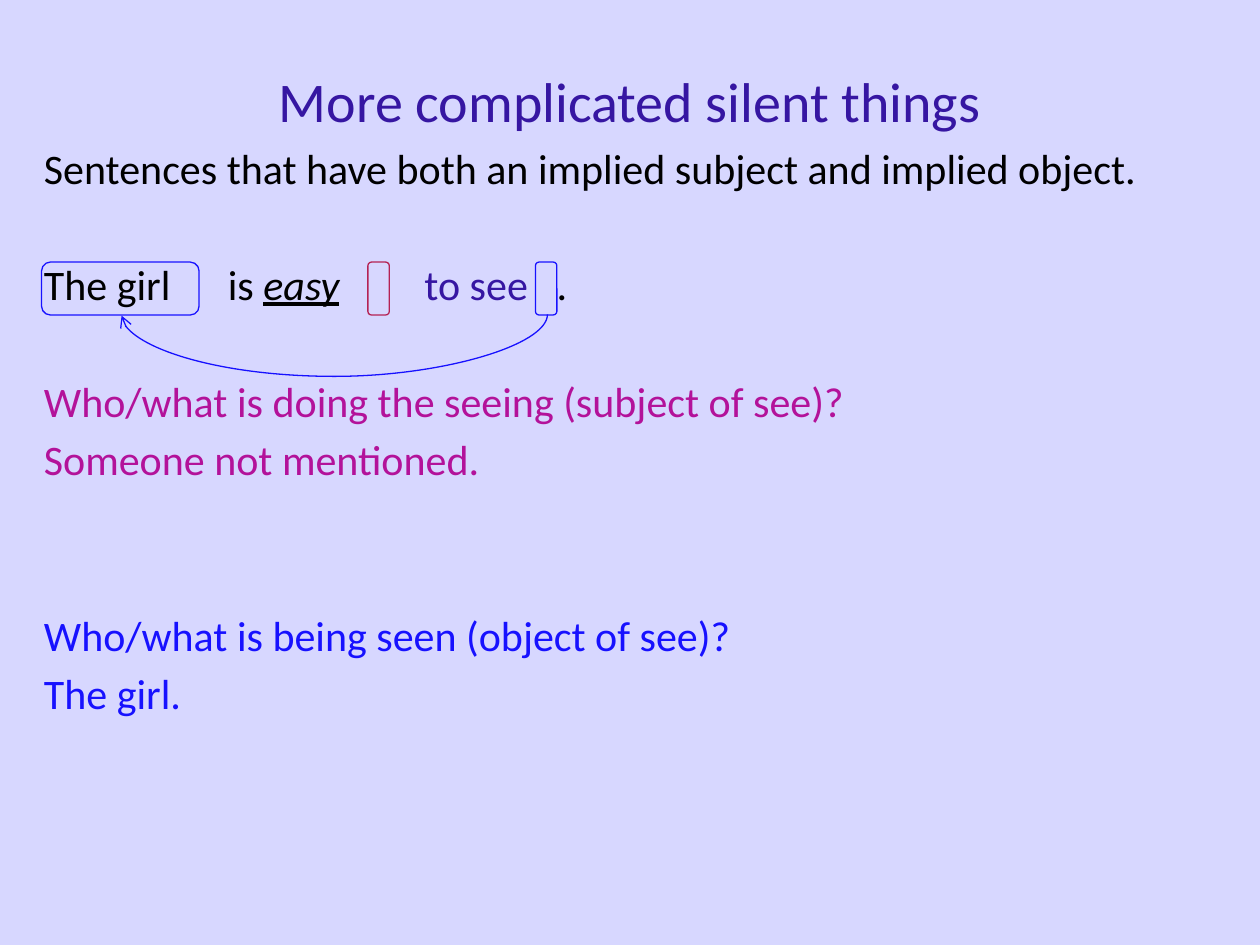
from dataclasses import dataclass

from lxml.etree import SubElement
from pptx import Presentation
from pptx.dml.color import RGBColor
from pptx.enum.shapes import MSO_CONNECTOR as CONNECTOR, MSO_SHAPE as SHAPE
from pptx.enum.text import MSO_ANCHOR as ANCHOR, PP_ALIGN as ALIGN
from pptx.oxml.ns import qn
from pptx.util import Inches, Pt


@dataclass(frozen=True)
class Theme:
    font: str = "Calibri"
    title_size: int = 32
    body_size: int = 24
    line_pitch: float = 33.7
    space_before: float = 4.4
    background: RGBColor = RGBColor.from_string("D7D7FF")
    black: RGBColor = RGBColor.from_string("000000")
    indigo: RGBColor = RGBColor.from_string("3616A2")
    magenta: RGBColor = RGBColor.from_string("B3129A")
    blue: RGBColor = RGBColor.from_string("1711FF")
    crimson: RGBColor = RGBColor.from_string("B52254")


theme = Theme()


def add_text(paragraph, text, size=theme.body_size, color=theme.black, emphasis=False):
    run = paragraph.add_run()
    run.text = text
    run.font.name = theme.font
    run.font.size = Pt(size)
    run.font.color.rgb = color
    if emphasis:
        run.font.italic = run.font.underline = True


def add_frame(slide, left, top, width, height):
    frame = slide.shapes.add_textbox(
        Inches(left), Inches(top), Inches(width), Inches(height)).text_frame
    frame.word_wrap = True
    frame.paragraphs[0].space_before = Pt(theme.space_before)
    return frame


presentation = Presentation()
presentation.slide_width, presentation.slide_height = Inches(10), Inches(7.5)
slide = presentation.slides.add_slide(presentation.slide_layouts[5])
slide.background.fill.solid()
slide.background.fill.fore_color.rgb = theme.background

# Title
title = slide.shapes.title
title.left, title.top = Inches(0.75), Inches(0.17)
title.width, title.height = Inches(8.5), Inches(1.25)
title.text_frame.vertical_anchor = ANCHOR.MIDDLE
paragraph = title.text_frame.paragraphs[0]
paragraph.alignment = ALIGN.CENTER
add_text(paragraph, "More complicated silent things",
         size=theme.title_size, color=theme.indigo)

# Introduction
introduction = add_frame(slide, 0.25, 1.08, 9.75, 0.6)
add_text(introduction.paragraphs[0],
         "Sentences that have both an implied subject and implied object.")

# Example sentence, with tab stops leaving room for the silent words
discussion = add_frame(slide, 0.25, 2, 9.75, 3.75)
example = discussion.paragraphs[0]
tab_list = SubElement(example._p.get_or_add_pPr(), qn("a:tabLst"))
for position in (1.46, 3.02, 4.07):
    SubElement(tab_list, qn("a:tab"), pos=str(Inches(position)), algn="l")
add_text(example, "The girl\tis ")
add_text(example, "easy", emphasis=True)
add_text(example, "\t")
add_text(example, "to see", color=theme.indigo)
add_text(example, "\t.")

# Questions and answers: text, colour, lines skipped above
for text, color, skipped in (
    ("Who/what is doing the seeing (subject of see)?", theme.magenta, 1),
    ("Someone not mentioned.", theme.magenta, 0),
    ("Who/what is being seen (object of see)?", theme.blue, 2),
    ("The girl.", theme.blue, 0),
):
    paragraph = discussion.add_paragraph()
    paragraph.space_before = Pt(theme.space_before + skipped * theme.line_pitch)
    add_text(paragraph, text, color=color)

# Outlines around the girl and the two silent words
outlines = []
for left, width, color in (
    (2.92, 0.17, theme.crimson),
    (4.25, 0.17, theme.blue),
    (0.33, 1.25, theme.blue),
):
    outline = slide.shapes.add_shape(
        SHAPE.ROUNDED_RECTANGLE, Inches(left), Inches(2.08), Inches(width), Inches(0.42))
    outline.shadow.inherit = False
    outline.fill.background()
    outline.line.color.rgb = color
    outline.line.width = Pt(0.75)
    outlines.append(outline)
silent_subject, silent_object, girl = outlines

# Curved arrow from the silent object back to the girl: a vertical
# connector turned by 90 degrees, bulging half an inch downwards
arrow = slide.shapes.add_connector(CONNECTOR.CURVE, 0, 0, 0, 0)
arrow.begin_connect(silent_object, 2)
arrow.end_connect(girl, 2)
bulge, thickness = 0.5, 0.01
arrow_properties = arrow._element.spPr
transform = arrow_properties.find(qn("a:xfrm"))
for flip in ("flipH", "flipV"):
    transform.attrib.pop(flip, None)
transform.set("rot", str(90 * 60000))
arrow.left, arrow.top = Inches(2.65), Inches(0.81)
arrow.width, arrow.height = Inches(thickness), Inches(3.38)
adjustments = arrow_properties.find(qn("a:prstGeom")).get_or_add_avLst()
SubElement(adjustments, qn("a:gd"), name="adj1",
           fmla=f"val {round(bulge / thickness * 100000)}")
arrow.line.color.rgb = theme.blue
arrow.line.width = Pt(0.75)
SubElement(arrow.line._get_or_add_ln(), qn("a:tailEnd"), type="arrow")
SubElement(arrow_properties, qn("a:effectLst"))

presentation.save("out.pptx")
